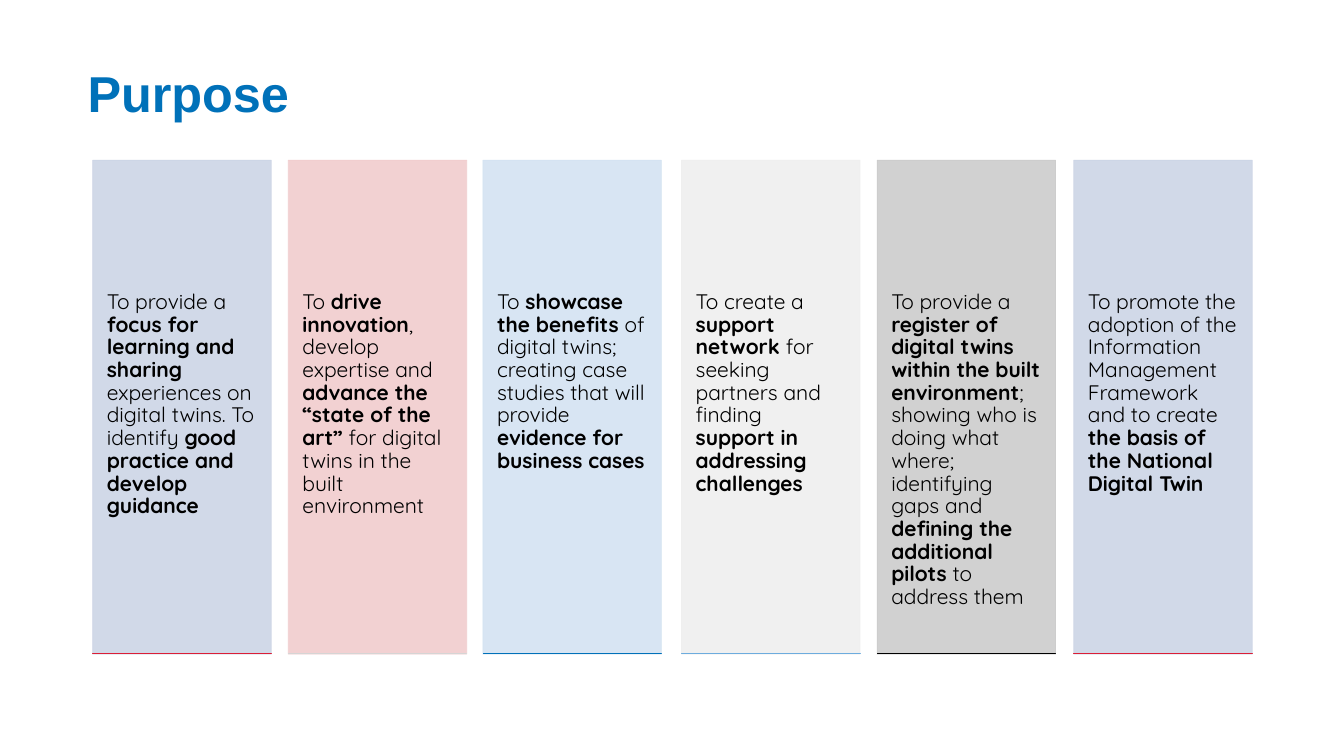
from lxml.etree import SubElement
from pptx import Presentation
from pptx.dml.color import RGBColor
from pptx.enum.shapes import MSO_SHAPE
from pptx.enum.text import MSO_ANCHOR, PP_ALIGN
from pptx.oxml.ns import qn
from pptx.util import Inches, Pt


def rgb(value):
    return RGBColor.from_string(value)


def add_run(p, text, font, size, color, bold):
    r = p.add_run()
    r.text = text
    r.font.name = font
    r.font.size = Pt(size)
    r.font.bold = bold
    r.font.color.rgb = rgb(color)


prs = Presentation()
prs.slide_width, prs.slide_height = Inches(13.33), Inches(7.5)
s = prs.slides.add_slide(prs.slide_layouts[6])

# Title
tf = s.shapes.add_textbox(Inches(0.77), Inches(0.1), Inches(11.94), Inches(1.17)).text_frame
tf.word_wrap = True
tf.vertical_anchor = MSO_ANCHOR.BOTTOM
p = tf.paragraphs[0]
p.line_spacing = 0.9
add_run(p, "Purpose", "Arial", 36, "0071B9", True)

# Columns: left, fill, base line colour, base gradient, text alternating regular and bold
RED, GREY = ("EFA0A4", "EE7D82"), ("F1F1F1", "E6E6E6")
BLUE, SKY, DARK = ("9DB6DE", "7C9DD0"), ("BAD5EF", "9DC5EB"), ("9D9D9D", "7C7C7C")
columns = [
    (0.92, "CCD5E6", "DB1E36", RED, [
        "To provide a ", "focus for learning and sharing",
        " experiences on digital twins. To identify ",
        "good practice and develop guidance"]),
    (2.86, "F1CDCE", "D5D5D5", GREY, [
        "To ", "drive innovation", ", develop expertise and ",
        "advance the “state of the art”",
        " for digital twins in the built environment"]),
    (4.79, "D4E3F2", "0071B9", BLUE, [
        "To ", "showcase the benefits ",
        "of digital twins; creating case studies that will provide ",
        "evidence for business cases"]),
    (6.76, "EFEFEF", "6DACDE", SKY, [
        "To create a ", "support network ", "for seeking partners and finding ",
        "support in addressing challenges"]),
    (8.7, "CCCCCC", "000000", DARK, [
        "To provide a ", "register of digital twins within the built environment",
        "; showing who is doing what where; identifying gaps and ",
        "defining the additional pilots", " to address them"]),
    (10.65, "CCD5E6", "DB1E36", RED, [
        "To promote the adoption of the Information Management Framework and to create ",
        "the basis of the National Digital Twin"]),
]
top, width, height = 1.59, 1.77, 4.9

for left, fill, base_line, base_fill, texts in columns:
    # Panel, 90% opaque
    sp = s.shapes.add_shape(MSO_SHAPE.RECTANGLE, Inches(left), Inches(top),
                            Inches(width), Inches(height))
    sp.shadow.inherit = False
    sp.fill.solid()
    sp.fill.fore_color.rgb = rgb(fill)
    sp.line.color.rgb = rgb(fill)
    sp.line.width = Pt(0.5)
    for clr in sp._element.spPr.iter(qn("a:srgbClr")):
        SubElement(clr, qn("a:alpha"), val="90000")

    # Panel text
    tf = sp.text_frame
    tf.word_wrap = True
    tf.vertical_anchor = MSO_ANCHOR.TOP
    tf.margin_left = tf.margin_right = Inches(0.14)
    tf.margin_top, tf.margin_bottom = Inches(1.3), Inches(0.41)
    p = tf.paragraphs[0]
    p.alignment = PP_ALIGN.LEFT
    p.line_spacing = 0.9
    for i, text in enumerate(texts):
        add_run(p, text, "Quicksand", 15, "000000", i % 2 == 1)

    # Flat base along the lower edge
    base = s.shapes.add_shape(MSO_SHAPE.RECTANGLE, Inches(left), Inches(6.48),
                              Inches(width), Inches(0))
    base.shadow.inherit = False
    base.fill.gradient()
    base.fill.gradient_angle = 270
    for stop, color in zip(base.fill.gradient_stops, base_fill):
        stop.color.rgb = rgb(color)
    base.line.color.rgb = rgb(base_line)
    base.line.width = Pt(0.5)

prs.save("out.pptx")
